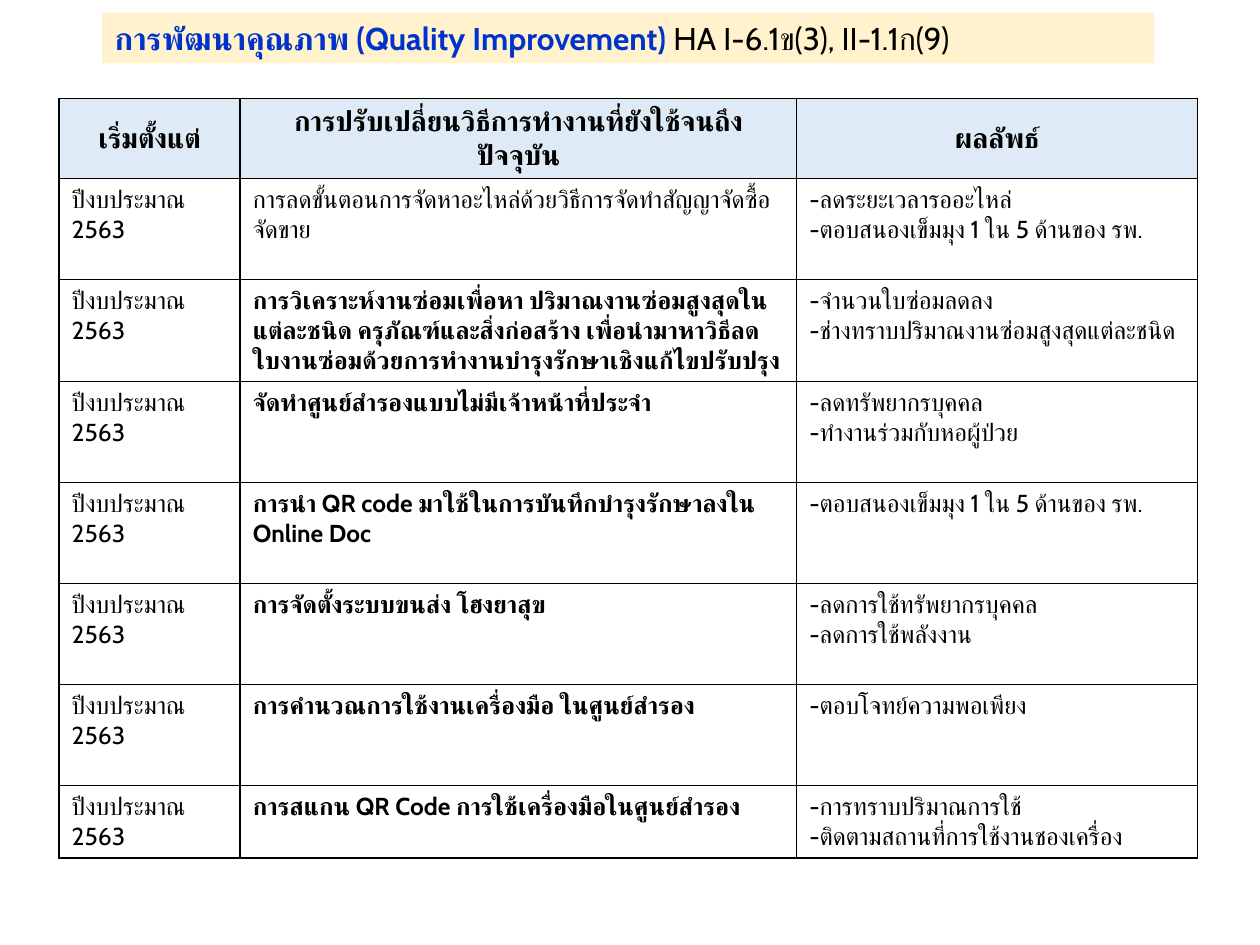
from lxml.etree import SubElement
from pptx import Presentation
from pptx.dml.color import RGBColor
from pptx.enum.text import MSO_ANCHOR, MSO_AUTO_SIZE, PP_ALIGN
from pptx.oxml.ns import qn
from pptx.util import Pt

FONT = "Cabin"
YEAR = "ปีงบประมาณ 2563"
HEADERS = ["เริ่มตั้งแต่", "การปรับเปลี่ยนวิธีการทำงานที่ยังใช้จนถึงปัจจุบัน", "ผลลัพธ์"]
# Each change of method with its results
CHANGES = [
    ("การลดขั้นตอนการจัดหาอะไหล่ด้วยวิธีการจัดทำสัญญาจัดซื้อจัดขาย",
     ["-ลดระยะเวลารออะไหล่", "-ตอบสนองเข็มมุง 1 ใน 5 ด้านของ รพ."]),
    ("การวิเคราะห์งานซ่อมเพื่อหา ปริมาณงานซ่อมสูงสุดในแต่ละชนิด ครุภัณฑ์และสิ่งก่อสร้าง "
     "เพื่อนำมาหาวิธีลดใบงานซ่อมด้วยการทำงานบำรุงรักษาเชิงแก้ไขปรับปรุง",
     ["-จำนวนใบซ่อมลดลง", "-ช่างทราบปริมาณงานซ่อมสูงสุดแต่ละชนิด"]),
    ("จัดทำศูนย์สำรองแบบไม่มีเจ้าหน้าที่ประจำ",
     ["-ลดทรัพยากรบุคคล", "-ทำงานร่วมกับหอผู้ป่วย"]),
    ("การนำ QR code มาใช้ในการบันทึกบำรุงรักษาลงใน Online Doc",
     ["-ตอบสนองเข็มมุง 1 ใน 5 ด้านของ รพ."]),
    ("การจัดตั้งระบบขนส่ง โฮงยาสุข",
     ["-ลดการใช้ทรัพยากรบุคคล", "-ลดการใช้พลังงาน"]),
    ("การคำนวณการใช้งานเครื่องมือ ในศูนย์สำรอง",
     ["-ตอบโจทย์ความพอเพียง"]),
    ("การสแกน QR Code การใช้เครื่องมือในศูนย์สำรอง",
     ["-การทราบปริมาณการใช้", "-ติดตามสถานที่การใช้งานชองเครื่อง"]),
]


def rgb(value):
    return RGBColor.from_string(value)


def add_run(p, text, size, bold, color="000000"):
    r = p.add_run()
    r.text = text
    r.font.size = Pt(size)
    r.font.bold = bold
    r.font.name = FONT
    r.font.color.rgb = rgb(color)
    # Thai text takes the complex-script font
    SubElement(r.font._element, qn("a:cs"), typeface=FONT)


prs = Presentation()
prs.slide_width, prs.slide_height = Pt(720), Pt(540)
s = prs.slides.add_slide(prs.slide_layouts[5])

# Title band
title = s.shapes.title
title.left, title.top, title.width, title.height = Pt(58.3), Pt(7.2), Pt(601.2), Pt(29.1)
title.fill.solid()
title.fill.fore_color.rgb = rgb("FFF2CC")
tf = title.text_frame
tf.word_wrap = True
tf.auto_size = MSO_AUTO_SIZE.NONE
tf.vertical_anchor = MSO_ANCHOR.TOP
p = tf.paragraphs[0]
p.alignment = PP_ALIGN.LEFT
add_run(p, "การพัฒนาคุณภาพ (Quality Improvement) ", 18, True, "0033CC")
add_run(p, "HA I-6.1ข(3), II-1.1ก(9)", 18, False)

# Table of changes
col_widths = [103.5, 318, 229]
row_heights = [45.7] + [57.7] * 6 + [40.8]
table = s.shapes.add_table(len(row_heights), len(col_widths), Pt(33.8), Pt(56.2),
                           Pt(sum(col_widths)), Pt(sum(row_heights))).table
table.horz_banding = False
for column, width in zip(table.columns, col_widths):
    column.width = Pt(width)
for row, height in zip(table.rows, row_heights):
    row.height = Pt(height)

rows = [[[header] for header in HEADERS]]
rows += [[[YEAR], [change], results] for change, results in CHANGES]
for i, row in enumerate(rows):
    for j, lines in enumerate(row):
        cell = table.cell(i, j)
        is_header = i == 0
        tcPr = cell._tc.get_or_add_tcPr()
        for side in ("lnL", "lnR", "lnT", "lnB"):
            ln = SubElement(tcPr, qn(f"a:{side}"), w=str(Pt(1)))
            SubElement(SubElement(ln, qn("a:solidFill")), qn("a:srgbClr"), val="000000")
        if is_header:
            cell.fill.solid()
            cell.fill.fore_color.rgb = rgb("DEEBF7")
            cell.vertical_anchor = MSO_ANCHOR.MIDDLE
        else:
            cell.fill.background()
        tf = cell.text_frame
        for k, line in enumerate(lines):
            p = tf.paragraphs[0] if k == 0 else tf.add_paragraph()
            p.alignment = PP_ALIGN.CENTER if is_header else PP_ALIGN.LEFT
            add_run(p, line, 16 if is_header else 14, is_header or (j == 1 and i > 1))

prs.save("out.pptx")
